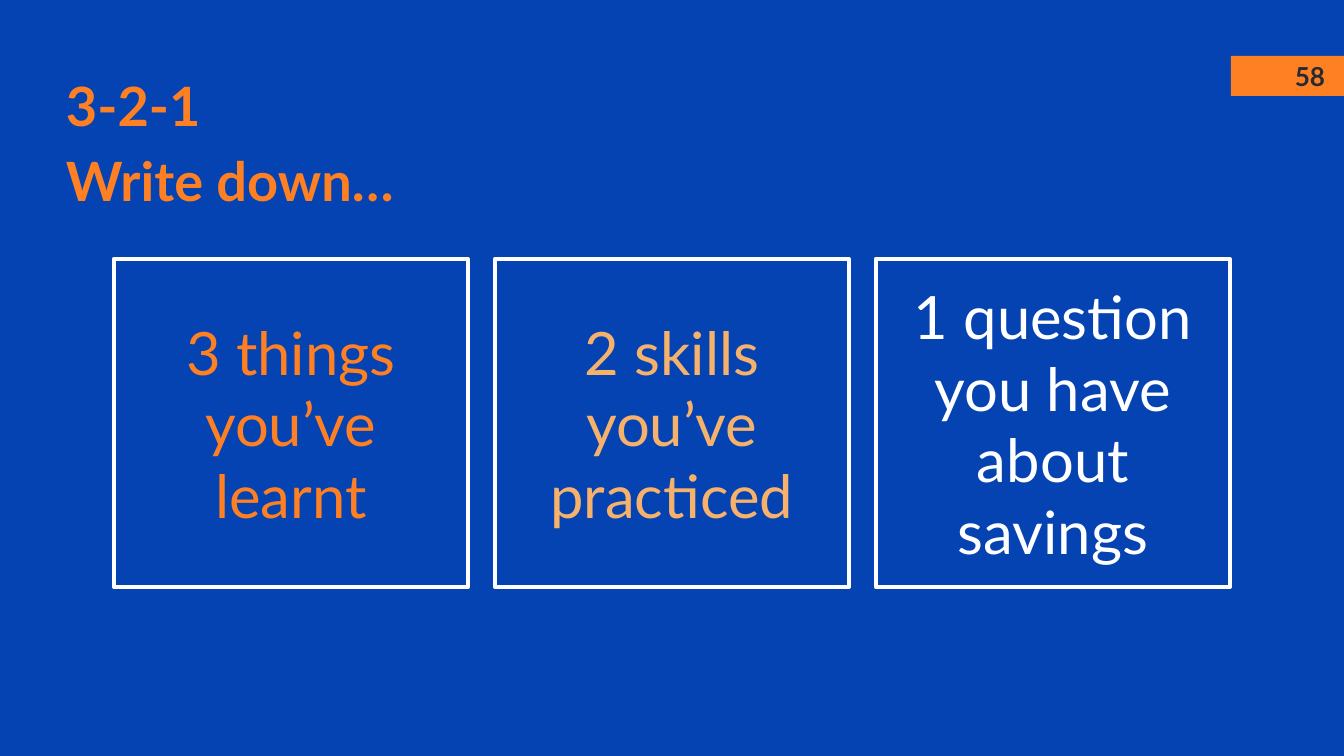
from pptx import Presentation
from pptx import util as u
from pptx.dml.color import RGBColor
from pptx.enum import shapes, text

SCALE = 914400 / 134.4
FONT = "Lato"
COLORS = {
    "blue": "0543B3",
    "orange": "FF8022",
    "peach": "F6B26B",
    "white": "FFFFFF",
    "dark": "262A33",
}


def px(n):
    return u.Emu(round(n * SCALE))


def rgb(name):
    return RGBColor.from_string(COLORS[name])


def write(sp, lines, size, color, bold=False, inset=13, spacing=None,
          align=text.PP_ALIGN.CENTER, anchor=text.MSO_ANCHOR.MIDDLE):
    tf = sp.text_frame
    tf.word_wrap = True
    tf.vertical_anchor = anchor
    tf.margin_left = tf.margin_right = px(inset)
    tf.margin_top = tf.margin_bottom = px(inset)
    tf.text = "\n".join(lines)
    for p in tf.paragraphs:
        p.alignment = align
        if spacing:
            p.line_spacing = spacing
        for r in p.runs:
            r.font.name = FONT
            r.font.size = u.Pt(size)
            r.font.bold = bold
            r.font.color.rgb = rgb(color)


def add_box(s, x, y, w, h, fill=None, line=None):
    sp = s.shapes.add_shape(shapes.MSO_SHAPE.RECTANGLE, px(x), px(y), px(w), px(h))
    sp.shadow.inherit = False
    if fill:
        sp.fill.solid()
        sp.fill.fore_color.rgb = rgb(fill)
    else:
        sp.fill.background()
    if line:
        sp.line.color.rgb = rgb(line)
        sp.line.width = u.Pt(2.25)
    else:
        sp.line.fill.background()
    return sp


def add_text(s, x, y, w, h, lines, size, color, **style):
    sp = s.shapes.add_textbox(px(x), px(y), px(w), px(h))
    write(sp, lines, size, color, **style)


def add_cards(s, cards):
    left, top, width, height, pitch = 114, 259, 354, 328, 381
    for i, (label, color) in enumerate(cards):
        sp = add_box(s, left + i * pitch, top, width, height, line="white")
        write(sp, [label], 32, color)


def main():
    prs = Presentation()
    prs.slide_width, prs.slide_height = px(1344), px(756)
    s = prs.slides.add_slide(prs.slide_layouts[6])
    s.background.fill.solid()
    s.background.fill.fore_color.rgb = rgb("blue")

    add_box(s, 1231, 56, 113, 40, fill="orange")
    add_text(s, 1275, 59, 70, 34, ["58"], 14, "dark", bold=True)
    add_text(s, 66, 63, 1056, 114, ["3-2-1", "Write down…"], 29, "orange",
             bold=True, inset=0, spacing=1.15,
             align=text.PP_ALIGN.LEFT, anchor=text.MSO_ANCHOR.TOP)
    add_cards(s, [
        ("3 things you’ve learnt", "orange"),
        ("2 skills you’ve practiced", "peach"),
        ("1 question you have about savings", "white"),
    ])
    prs.save("out.pptx")


if __name__ == "__main__":
    main()
